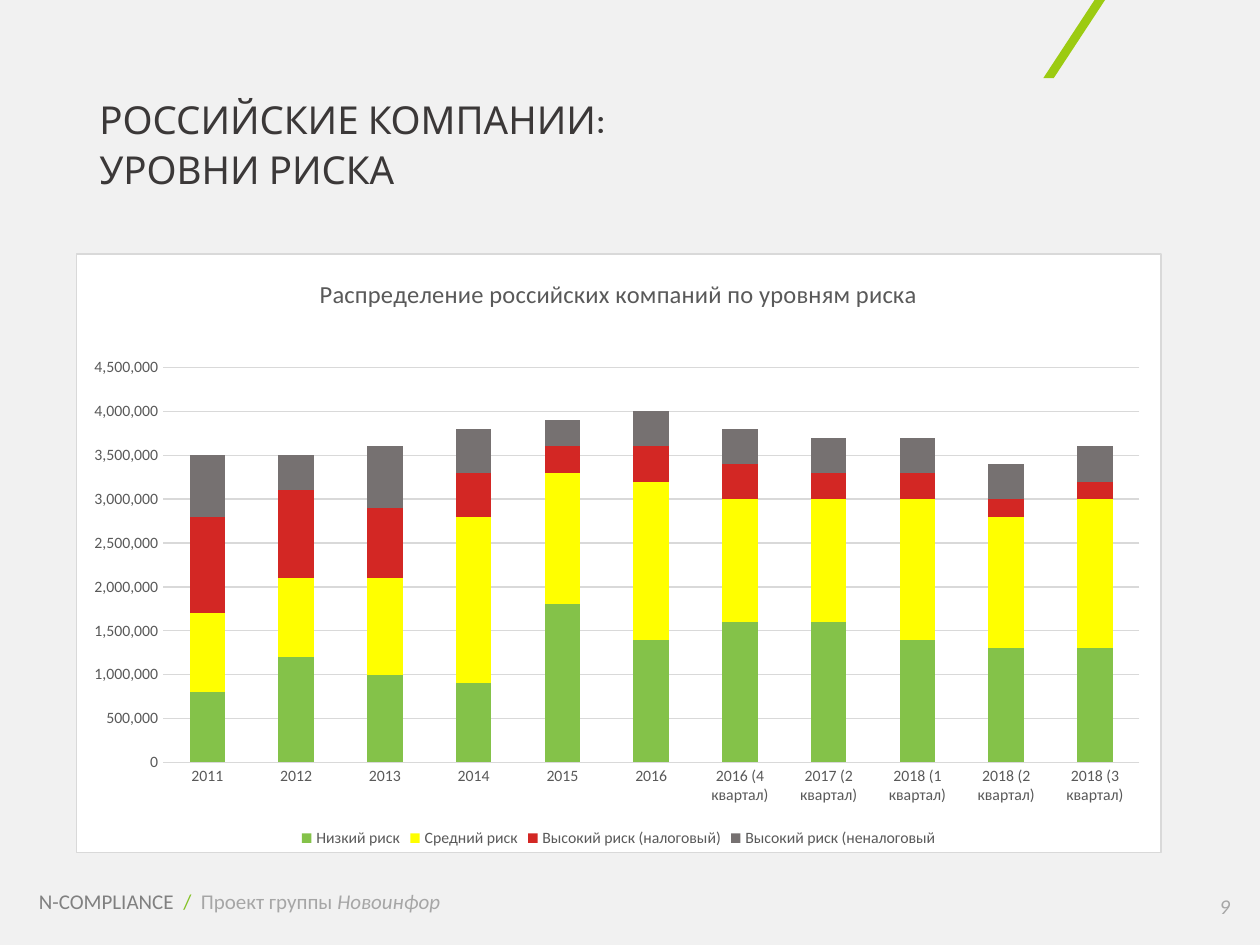
from lxml import etree
from pptx import Presentation
from pptx.chart.data import CategoryChartData
from pptx.dml.color import RGBColor
from pptx.enum import chart as ch, shapes, text
from pptx.oxml import parse_xml
from pptx.oxml.ns import nsdecls, qn
from pptx.util import Inches, Pt

PAPER = RGBColor(0xF2, 0xF2, 0xF2)
PANEL = RGBColor(0xF1, 0xF1, 0xF1)
LIME = RGBColor(0x9C, 0xCB, 0x12)
SLASH = RGBColor(0x84, 0xC2, 0x25)
INK = RGBColor(0x3B, 0x38, 0x38)
GRAY = RGBColor(0x80, 0x80, 0x80)
LIGHT = RGBColor(0xA6, 0xA6, 0xA6)
LABEL = RGBColor(0x59, 0x59, 0x59)
GRID = RGBColor(0xD9, 0xD9, 0xD9)
GREEN = RGBColor(0x84, 0xC2, 0x49)
YELLOW = RGBColor(0xFF, 0xFF, 0x00)
RED = RGBColor(0xD3, 0x27, 0x24)
STONE = RGBColor(0x76, 0x71, 0x71)

CATEGORIES = ["2011", "2012", "2013", "2014", "2015", "2016",
              "2016 (4 квартал)", "2017 (2 квартал)", "2018 (1 квартал)",
              "2018 (2 квартал)", "2018 (3 квартал)"]
RISKS_MILLIONS = [
    ("Низкий риск", GREEN, [0.8, 1.2, 1, 0.9, 1.8, 1.4, 1.6, 1.6, 1.4, 1.3, 1.3]),
    ("Средний риск", YELLOW, [0.9, 0.9, 1.1, 1.9, 1.5, 1.8, 1.4, 1.4, 1.6, 1.5, 1.7]),
    ("Высокий риск (налоговый)", RED,
     [1.1, 1, 0.8, 0.5, 0.3, 0.4, 0.4, 0.3, 0.3, 0.2, 0.2]),
    ("Высокий риск (неналоговый", STONE,
     [0.7, 0.4, 0.7, 0.5, 0.3, 0.4, 0.4, 0.4, 0.4, 0.4, 0.4]),
]


def set_font(font, size, color, name="Calibri", italic=None):
    """Set the usual properties of a font."""
    font.size, font.name, font.italic = Pt(size), name, italic
    font.color.rgb = color


def add_block(s, kind, box, color):
    """Add a plain filled shape."""
    sp = s.shapes.add_shape(kind, *map(Inches, box))
    sp.shadow.inherit = False
    sp.fill.solid()
    sp.fill.fore_color.rgb = color
    sp.line.fill.background()
    return sp


def add_text(s, box, runs, size, name="Calibri", anchor=text.MSO_ANCHOR.TOP):
    """Add a one-paragraph text box from (text, colour, italic) runs."""
    tf = s.shapes.add_textbox(*map(Inches, box)).text_frame
    tf.word_wrap = True
    tf.vertical_anchor = anchor
    p = tf.paragraphs[0]
    for words, color, italic in runs:
        r = p.add_run()
        r.text = words
        set_font(r.font, size, color, name, italic)
    return p


def add_title(s):
    """Add the two-line slide title."""
    p = add_text(s, (0.69, 0.4, 8.62, 1.45), [("РОССИЙСКИЕ КОМПАНИИ:", INK, None)],
                 22, "Karla", text.MSO_ANCHOR.MIDDLE)
    p.line_spacing = 1.1
    p.add_line_break()
    r = p.add_run()
    r.text = "УРОВНИ РИСКА"
    set_font(r.font, 22, INK, "Karla")


def frame_chart(chart):
    """Give the chart a white bordered area and a fixed plot position."""
    space = chart.element
    space.find(qn("c:chart")).addnext(parse_xml(
        f'<c:spPr {nsdecls("c", "a")}>'
        '<a:solidFill><a:srgbClr val="FFFFFF"/></a:solidFill>'
        f'<a:ln w="9525"><a:solidFill><a:srgbClr val="{GRID}"/></a:solidFill></a:ln>'
        '</c:spPr>'))
    plot_area = space.find(".//" + qn("c:plotArea"))
    for old in plot_area.findall(qn("c:layout")):
        plot_area.remove(old)
    layout = parse_xml(f'<c:layout {nsdecls("c")}><c:manualLayout/></c:layout>')
    settings = [("layoutTarget", "inner"), ("xMode", "edge"), ("yMode", "edge"),
                ("x", 0.08), ("y", 0.19), ("w", 0.9), ("h", 0.66)]
    for tag, value in settings:
        etree.SubElement(layout[0], qn("c:" + tag)).set("val", str(value))
    plot_area.insert(0, layout)


def style_axes(chart):
    """Format both axes and the gridlines."""
    for axis in (chart.category_axis, chart.value_axis):
        axis.major_tick_mark = axis.minor_tick_mark = ch.XL_TICK_MARK.NONE
        set_font(axis.tick_labels.font, 9, LABEL)
    line = chart.category_axis.format.line
    grid = chart.value_axis.major_gridlines.format.line
    for ln in (line, grid):
        ln.color.rgb = GRID
        ln.width = Pt(0.75)
    axis = chart.value_axis
    axis.format.line.fill.background()
    axis.minimum_scale, axis.maximum_scale, axis.major_unit = 0, 4500000, 500000
    axis.tick_labels.number_format = "#,##0"
    axis.tick_labels.number_format_is_linked = False


def add_risk_chart(s):
    """Add the stacked column chart of risk levels."""
    data = CategoryChartData(number_format="#,##0")
    data.categories = CATEGORIES
    for name, _, millions in RISKS_MILLIONS:
        data.add_series(name, [round(m * 1000000) for m in millions])
    box = map(Inches, (0.6, 2.01, 8.62, 4.76))
    chart = s.shapes.add_chart(ch.XL_CHART_TYPE.COLUMN_STACKED, *box, data).chart
    set_font(chart.font, 10, RGBColor(0, 0, 0))
    chart.has_title = True
    tf = chart.chart_title.text_frame
    tf.text = "Распределение российских компаний по уровням риска"
    set_font(tf.paragraphs[0].runs[0].font, 14, LABEL)
    tf.paragraphs[0].runs[0].font.bold = False
    chart.chart_title.include_in_layout = False
    chart.has_legend = True
    chart.legend.position = ch.XL_LEGEND_POSITION.BOTTOM
    chart.legend.include_in_layout = False
    set_font(chart.legend.font, 9, LABEL)
    plot = chart.plots[0]
    plot.gap_width, plot.overlap, plot.vary_by_categories = 150, 100, False
    for series, (_, color, _) in zip(plot.series, RISKS_MILLIONS):
        series.format.fill.solid()
        series.format.fill.fore_color.rgb = color
    style_axes(chart)
    frame_chart(chart)


def main():
    """Build the slide and save it."""
    prs = Presentation()
    prs.slide_width, prs.slide_height = Inches(10), Inches(7.5)
    s = prs.slides.add_slide(prs.slide_layouts[6])
    s.background.fill.solid()
    s.background.fill.fore_color.rgb = PAPER
    add_block(s, shapes.MSO_SHAPE.RECTANGLE, (0, 0, 10, 7.5), PANEL)
    add_text(s, (0.21, 7, 4.02, 0.3),
             [("N-COMPLIANCE  ", GRAY, None), ("/  ", SLASH, None),
              ("Проект группы ", LIGHT, None), ("Новоинфор", LIGHT, True)], 12)
    slash = add_block(s, shapes.MSO_SHAPE.PARALLELOGRAM, (8.28, 0, 0.49, 0.62), LIME)
    slash.adjustments[0] = 0.83
    p = add_text(s, (7.61, 6.99, 2.25, 0.4), [("9", LIGHT, True)], 12,
                 anchor=text.MSO_ANCHOR.MIDDLE)
    p.alignment = text.PP_ALIGN.RIGHT
    add_title(s)
    add_risk_chart(s)
    prs.save("out.pptx")


if __name__ == "__main__":
    main()
